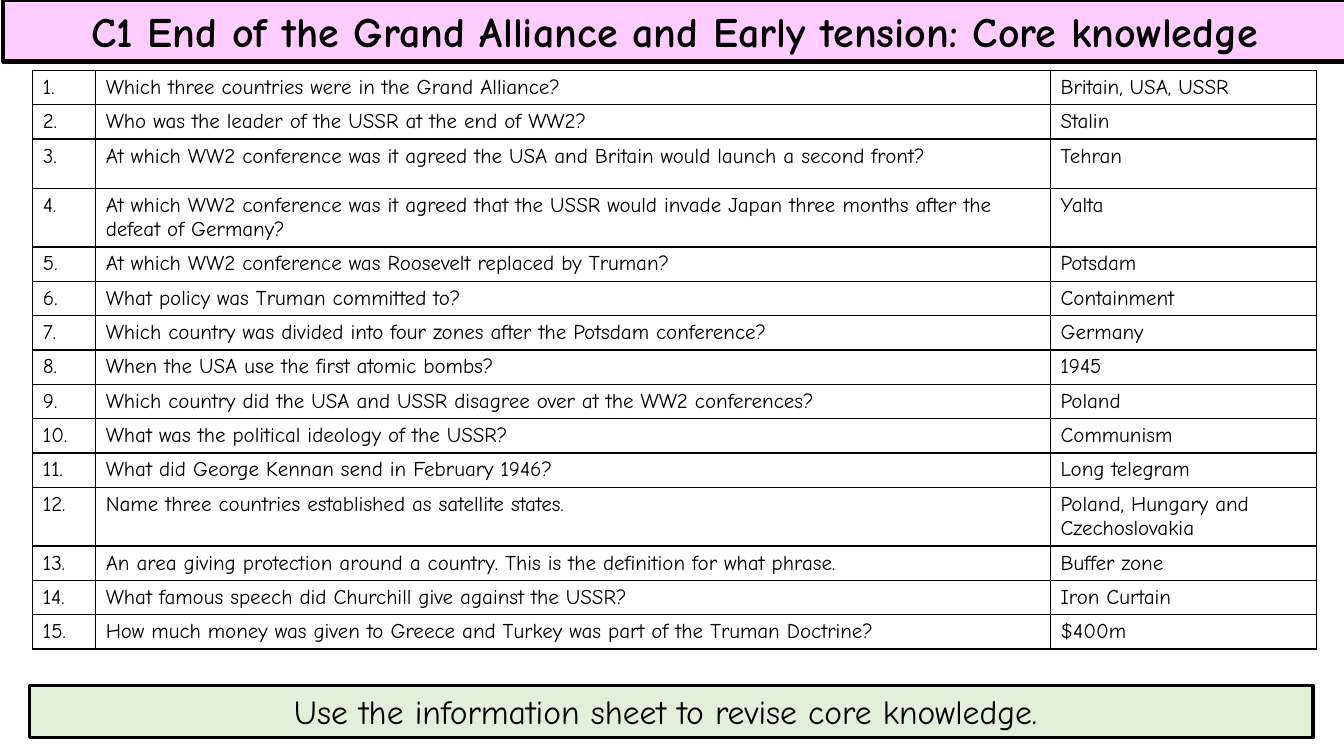
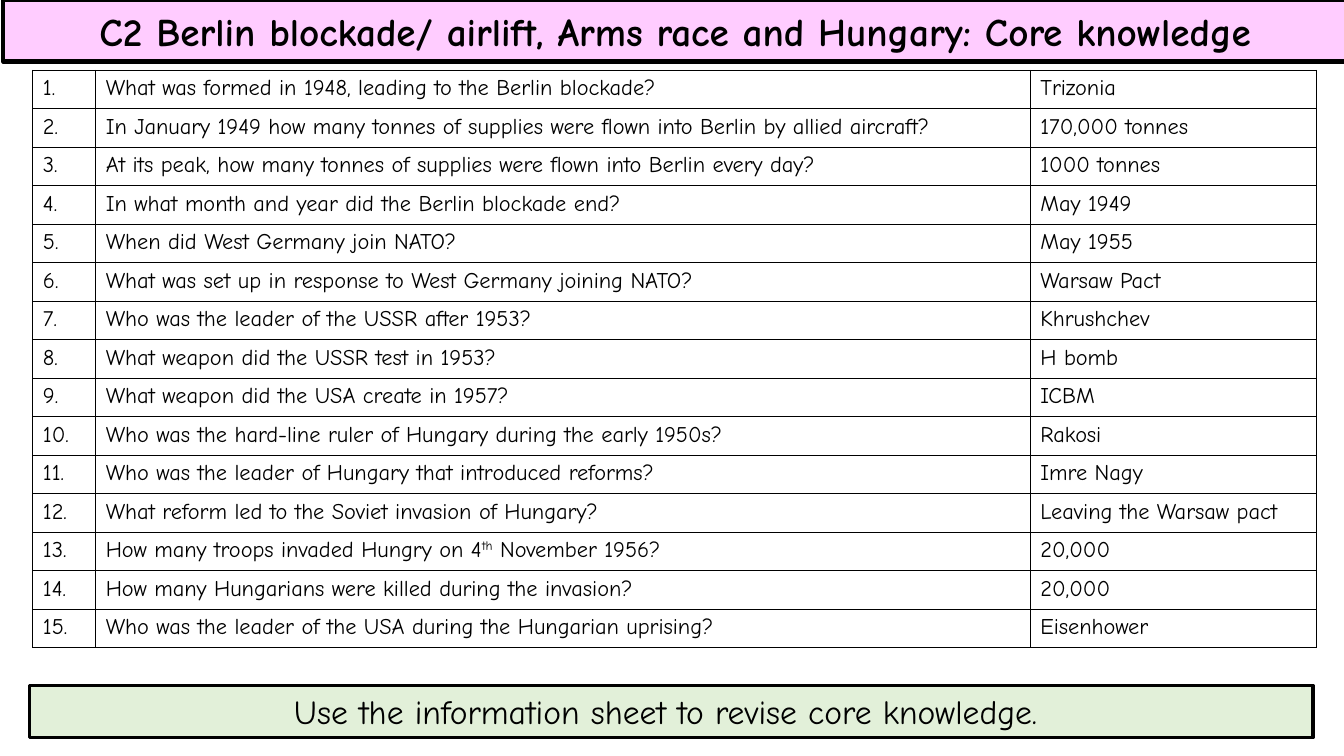
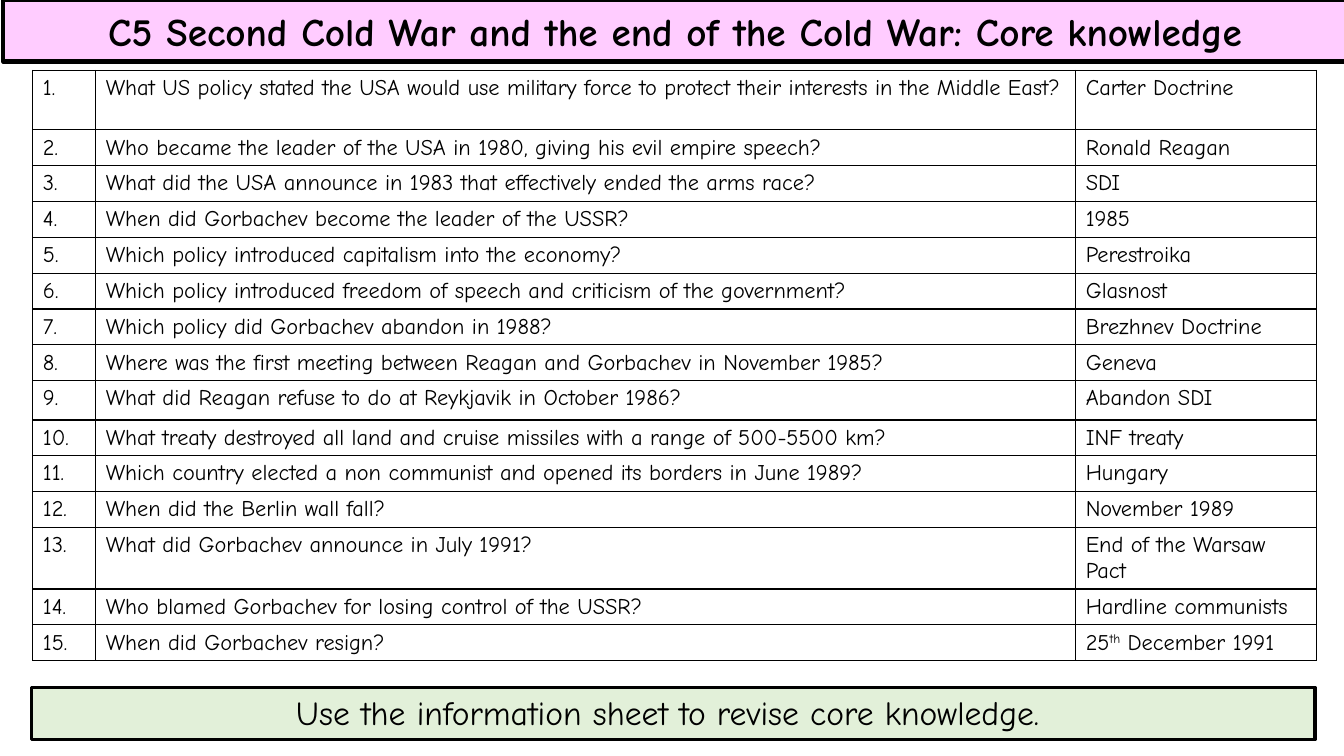
"""Build three Cold War core knowledge quiz slides."""
from dataclasses import dataclass

from lxml.etree import SubElement
from pptx import Presentation
from pptx.dml.color import RGBColor
from pptx.enum.shapes import MSO_SHAPE as Shape
from pptx.enum.text import MSO_ANCHOR as Anchor, MSO_AUTO_SIZE as AutoSize, PP_ALIGN as Align
from pptx.oxml.ns import qn
from pptx.util import Pt


@dataclass(frozen=True)
class Theme:
    font: str = "Comic Neue"
    ink: RGBColor = RGBColor(0x00, 0x00, 0x00)
    paper: RGBColor = RGBColor(0xFF, 0xFF, 0xFF)
    title_band: RGBColor = RGBColor(0xFF, 0xCC, 0xFF)
    footer_band: RGBColor = RGBColor(0xE2, 0xF0, 0xD9)
    footer_size: int = 24
    title_line: float = 3
    footer_line: float = 2.25
    cell_line: float = 1


THEME = Theme()
FOOTER = "Use the information sheet to revise core knowledge. "
TABLE_LEFT, TABLE_TOP, TABLE_WIDTH = 23.5, 50.3, 917
NUMBER_WIDTH = 44.9

QUIZZES = [
    {
        "title": "C1 End of the Grand Alliance and Early tension: Core knowledge",
        "title_size": 30,
        "text_size": 15,
        "answer_width": 190.1,
        "row_height": 24.5,
        "tall_rows": {3: 35.1, 4: 42, 12: 42},
        "footer_at": (20.9, 489.6),
        "questions": [
            ("Which three countries were in the Grand Alliance?", "Britain, USA, USSR"),
            ("Who was the leader of the USSR at the end of WW2?", "Stalin"),
            ("At which WW2 conference was it agreed the USA and Britain would launch a second front?", "Tehran"),
            ("At which WW2 conference was it agreed that the USSR would invade Japan three months after the "
             "defeat of Germany?", "Yalta"),
            ("At which WW2 conference was Roosevelt replaced by Truman?", "Potsdam"),
            ("What policy was Truman committed to?", "Containment"),
            ("Which country was divided into four zones after the Potsdam conference?", "Germany"),
            ("When the USA use the first atomic bombs?", "1945"),
            ("Which country did the USA and USSR disagree over at the WW2 conferences?", "Poland"),
            ("What was the political ideology of the USSR?", "Communism"),
            ("What did George Kennan send in February 1946?", "Long telegram"),
            ("Name three countries established as satellite states.", "Poland, Hungary and Czechoslovakia"),
            ("An area giving protection around a country. This is the definition for what phrase.", "Buffer zone"),
            ("What famous speech did Churchill give against the USSR?", "Iron Curtain"),
            ("How much money was given to Greece and Turkey was part of the Truman Doctrine?", "$400m"),
        ],
    },
    {
        "title": "C2 Berlin blockade/ airlift, Arms race and Hungary: Core knowledge",
        "title_size": 28,
        "text_size": 16,
        "answer_width": 204.5,
        "row_height": 27.5,
        "tall_rows": {},
        "footer_at": (20.9, 489.6),
        "questions": [
            ("What was formed in 1948, leading to the Berlin blockade?", "Trizonia"),
            ("In January 1949 how many tonnes of supplies were flown into Berlin by allied aircraft?",
             "170,000 tonnes"),
            ("At its peak, how many tonnes of supplies were flown into Berlin every day?", "1000 tonnes"),
            ("In what month and year did the Berlin blockade end?", "May 1949"),
            ("When did West Germany join NATO?", "May 1955"),
            ("What was set up in response to West Germany joining NATO?", "Warsaw Pact"),
            ("Who was the leader of the USSR after 1953?", "Khrushchev"),
            ("What weapon did the USSR test in 1953?", "H bomb"),
            ("What weapon did the USA create in 1957?", "ICBM"),
            ("Who was the hard-line ruler of Hungary during the early 1950s?", "Rakosi"),
            ("Who was the leader of Hungary that introduced reforms?", "Imre Nagy"),
            ("What reform led to the Soviet invasion of Hungary?", "Leaving the Warsaw pact"),
            ("How many troops invaded Hungry on 4^th^ November 1956?", "20,000"),
            ("How many Hungarians were killed during the invasion?", "20,000"),
            ("Who was the leader of the USA during the Hungarian uprising?", "Eisenhower"),
        ],
    },
    {
        "title": "C5 Second Cold War and the end of the Cold War: Core knowledge",
        "title_size": 28,
        "text_size": 16,
        "answer_width": 172.1,
        "row_height": 25.6,
        "tall_rows": {1: 42.5, 9: 28, 13: 43.8},
        "footer_at": (22.3, 491),
        "questions": [
            ("What US policy stated the USA would use military force to protect their interests in the Middle East?",
             "Carter Doctrine"),
            ("Who became the leader of the USA in 1980, giving his evil empire speech?", "Ronald Reagan"),
            ("What did the USA announce in 1983 that effectively ended the arms race?", "SDI"),
            ("When did Gorbachev become the leader of the USSR?", "1985"),
            ("Which policy introduced capitalism into the economy?", "Perestroika"),
            ("Which policy introduced freedom of speech and criticism of the government?", "Glasnost"),
            ("Which policy did Gorbachev abandon in 1988?", "Brezhnev Doctrine"),
            ("Where was the first meeting between Reagan and Gorbachev in November 1985?", "Geneva"),
            ("What did Reagan refuse to do at Reykjavik in October 1986?", "Abandon SDI"),
            ("What treaty destroyed all land and cruise missiles with a range of 500-5500 km?", "INF treaty"),
            ("Which country elected a non communist and opened its borders in June 1989?", "Hungary"),
            ("When did the Berlin wall fall?", "November 1989"),
            ("What did Gorbachev announce in July 1991?", "End of the Warsaw Pact"),
            ("Who blamed Gorbachev for losing control of the USSR?", "Hardline communists"),
            ("When did Gorbachev resign?", "25^th^ December 1991"),
        ],
    },
]


def add_text(paragraph, text, size, bold=False):
    for index, piece in enumerate(text.split("^")):
        run = paragraph.add_run()
        run.text = piece
        run.font.name = THEME.font
        run.font.size = Pt(size)
        run.font.bold = bold
        run.font.color.rgb = THEME.ink
        if index % 2:
            run._r.get_or_add_rPr().set("baseline", "30000")


def format_band(shape, fill, line_width, text, size, anchor, bold=False):
    shape.fill.solid()
    shape.fill.fore_color.rgb = fill
    shape.line.color.rgb = THEME.ink
    shape.line.width = Pt(line_width)
    frame = shape.text_frame
    frame.auto_size = AutoSize.NONE
    frame.word_wrap = True
    frame.vertical_anchor = anchor
    paragraph = frame.paragraphs[0]
    paragraph.alignment = Align.CENTER
    add_text(paragraph, text, size, bold)


presentation = Presentation()
presentation.slide_width, presentation.slide_height = Pt(960), Pt(540)
title_only = presentation.slide_layouts[5]

for quiz in QUIZZES:
    slide = presentation.slides.add_slide(title_only)
    title = slide.shapes.title
    title.left, title.top, title.width, title.height = Pt(2.2), Pt(0), Pt(960), Pt(43.9)
    format_band(title, THEME.title_band, THEME.title_line, quiz["title"], quiz["title_size"], Anchor.MIDDLE, True)

    left, top = quiz["footer_at"]
    footer = slide.shapes.add_shape(Shape.RECTANGLE, Pt(left), Pt(top), Pt(TABLE_WIDTH), Pt(37.4))
    footer.shadow.inherit = False
    format_band(footer, THEME.footer_band, THEME.footer_line, FOOTER, THEME.footer_size, Anchor.TOP)

    questions = quiz["questions"]
    heights = [quiz["tall_rows"].get(number, quiz["row_height"]) for number in range(1, len(questions) + 1)]
    widths = [NUMBER_WIDTH, TABLE_WIDTH - NUMBER_WIDTH - quiz["answer_width"], quiz["answer_width"]]
    table = slide.shapes.add_table(
        len(heights), len(widths), Pt(TABLE_LEFT), Pt(TABLE_TOP), Pt(TABLE_WIDTH), Pt(sum(heights))
    ).table
    table.first_row = table.horz_banding = False
    for column, width in zip(table.columns, widths):
        column.width = Pt(width)
    for number, (row, height, question) in enumerate(zip(table.rows, heights, questions), 1):
        row.height = Pt(height)
        for cell, text in zip(row.cells, (f"{number}.", *question)):
            properties = cell._tc.get_or_add_tcPr()
            for side in ("a:lnL", "a:lnR", "a:lnT", "a:lnB"):
                border = SubElement(properties, qn(side), w=str(Pt(THEME.cell_line)))
                SubElement(SubElement(border, qn("a:solidFill")), qn("a:srgbClr"), val=str(THEME.ink))
            cell.fill.solid()
            cell.fill.fore_color.rgb = THEME.paper
            add_text(cell.text_frame.paragraphs[0], text, quiz["text_size"])

presentation.save("out.pptx")
